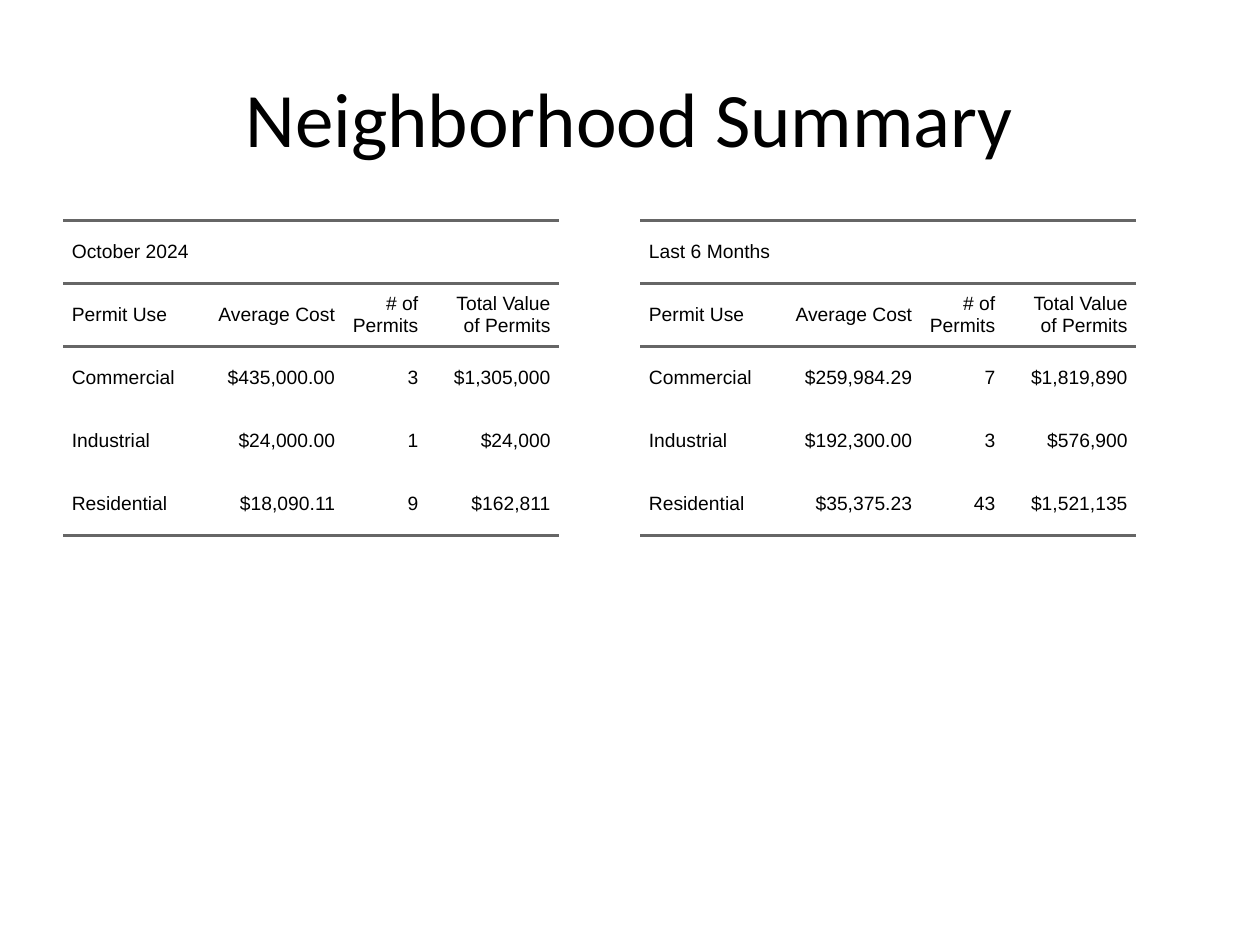
from lxml.etree import SubElement
from pptx import Presentation
from pptx.dml.color import RGBColor
from pptx.enum.text import MSO_ANCHOR, PP_ALIGN
from pptx.oxml.ns import qn
from pptx.util import Inches, Pt

BLACK = RGBColor(0x00, 0x00, 0x00)
RULE_GRAY = RGBColor(0x66, 0x66, 0x66)
NO_STYLE_NO_GRID = "{2D5ABB26-0587-4C30-8999-92F81FD0307C}"

COL_WIDTHS = [1.1, 1.13, 0.66, 1.05]
ROW_HEIGHT = 0.5
PAD = Inches(0.07)
HEADERS = ["Permit Use", "Average Cost", "# of Permits", "Total Value of Permits"]
PERIODS = [
    (0.5, "October 2024", [
        ["Commercial", "$435,000.00", "3", "$1,305,000"],
        ["Industrial", "$24,000.00", "1", "$24,000"],
        ["Residential", "$18,090.11", "9", "$162,811"],
    ]),
    (5.08, "Last 6 Months", [
        ["Commercial", "$259,984.29", "7", "$1,819,890"],
        ["Industrial", "$192,300.00", "3", "$576,900"],
        ["Residential", "$35,375.23", "43", "$1,521,135"],
    ]),
]


def add_rule(cell, side):
    """Draw a gray border on one side of a cell: lnT or lnB."""
    ln = SubElement(cell._tc.get_or_add_tcPr(), qn(f"a:{side}"), w=str(Pt(1.5)))
    fill = SubElement(ln, qn("a:solidFill"))
    SubElement(fill, qn("a:srgbClr"), val=str(RULE_GRAY))


def add_text(p, text, font, size):
    r = p.add_run()
    r.text = text
    r.font.name = font
    r.font.size = Pt(size)
    r.font.color.rgb = BLACK


prs = Presentation()
prs.slide_width, prs.slide_height = Inches(10), Inches(7.5)
s = prs.slides.add_slide(prs.slide_layouts[5])

title = s.shapes.title
title.left, title.top = Inches(0.5), Inches(0.3)
title.width, title.height = Inches(9), Inches(1.25)
tf = title.text_frame
tf.vertical_anchor = MSO_ANCHOR.MIDDLE
tf.paragraphs[0].alignment = PP_ALIGN.CENTER
add_text(tf.paragraphs[0], "Neighborhood Summary", "Calibri", 44)

for left, period, permits in PERIODS:
    rows = [[period, "", "", ""], HEADERS, *permits]
    frame = s.shapes.add_table(
        len(rows), len(COL_WIDTHS), Inches(left), Inches(1.75),
        Inches(sum(COL_WIDTHS)), Inches(ROW_HEIGHT * len(rows)))
    table = frame.table
    table.first_row = table.horz_banding = False
    table._tbl.tblPr.find(qn("a:tableStyleId")).text = NO_STYLE_NO_GRID
    for col, width in zip(table.columns, COL_WIDTHS):
        col.width = Inches(width)
    table.cell(0, 0).merge(table.cell(0, len(COL_WIDTHS) - 1))

    for i, row in enumerate(rows):
        table.rows[i].height = Inches(ROW_HEIGHT)
        for j, text in enumerate(row):
            cell = table.cell(i, j)
            cell.margin_left = cell.margin_right = 0
            cell.margin_top = cell.margin_bottom = PAD
            cell.vertical_anchor = MSO_ANCHOR.MIDDLE
            if i < 2:
                add_rule(cell, "lnT")
            if i < 2 or i == len(rows) - 1:
                add_rule(cell, "lnB")
            cell.fill.background()
            if not text:
                continue
            p = cell.text_frame.paragraphs[0]
            p.alignment = PP_ALIGN.RIGHT if j else PP_ALIGN.LEFT
            p.space_before = p.space_after = Pt(5)
            pPr = p._p.get_or_add_pPr()
            for margin in ("marL", "marR"):
                pPr.set(margin, str(PAD))
            add_text(p, text, "Arial", 11)

prs.save("out.pptx")
